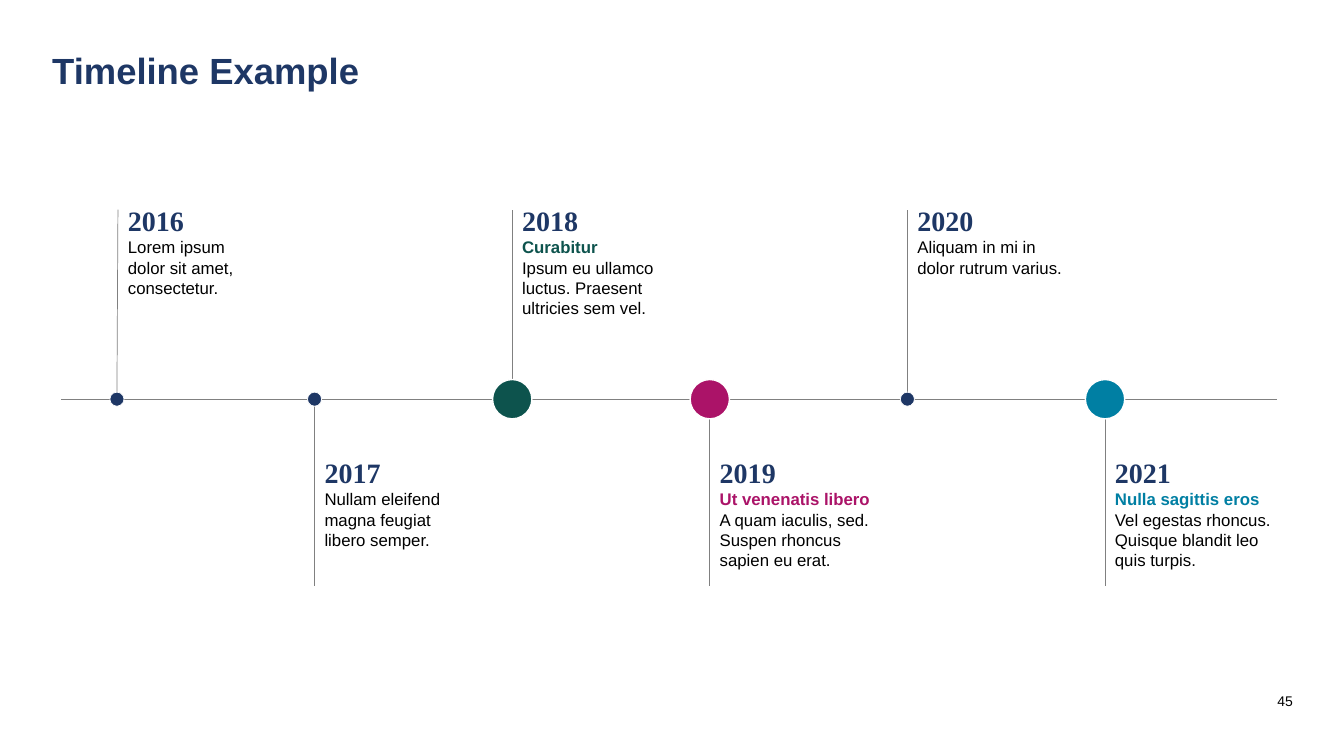
from lxml import etree
from pptx import Presentation
from pptx.dml.color import RGBColor
from pptx.enum.shapes import MSO_CONNECTOR, MSO_SHAPE
from pptx.enum.text import MSO_ANCHOR, MSO_AUTO_SIZE, PP_ALIGN
from pptx.oxml.ns import qn
from pptx.util import Inches, Pt

STRAIGHT = MSO_CONNECTOR.STRAIGHT
ELLIPSE = MSO_SHAPE.OVAL
TOP, MIDDLE = MSO_ANCHOR.TOP, MSO_ANCHOR.MIDDLE
GROW = MSO_AUTO_SIZE.SHAPE_TO_FIT_TEXT
RIGHT = PP_ALIGN.RIGHT

NAVY, BLACK, WHITE, GRAY = "1E3765", "000000", "FFFFFF", "808080"
GREEN, MAGENTA, TEAL = "0D534D", "AB1368", "007FA3"
SANS, SERIF = "Arial", "Times New Roman"

AXIS_Y = 3.96
FIRST_X, STEP = 1.16, 1.96
UPPER_END, LOWER_END = 2.08, 5.81
UPPER_TEXT, LOWER_TEXT = 1.97, 4.47

# Year, heading, body lines, accent, box width, box height, stem tilt
EVENTS = [
    ("2016", "", ["Lorem ipsum ", "dolor sit amet, consectetur."], NAVY, 1.28, 1.35, 0.01),
    ("2017", "", ["Nullam eleifend magna feugiat ", "libero semper."], NAVY, 1.48, 1.04, 0),
    ("2018", "Curabitur", ["Ipsum eu ullamco luctus. Praesent ultricies sem vel."],
     GREEN, 1.57, 1.25, 0),
    ("2019", "Ut venenatis libero ", ["A quam iaculis, sed. Suspen rhoncus sapien eu erat."],
     MAGENTA, 1.77, 1.25, 0),
    ("2020", "", ["Aliquam in mi in dolor rutrum varius."], NAVY, 1.65, 0.84, 0),
    ("2021", "Nulla sagittis eros ", ["Vel egestas rhoncus. Quisque blandit leo quis turpis."],
     TEAL, 1.77, 1.25, 0),
]


def color(value):
    """Turn a hex string into a colour."""
    return RGBColor.from_string(value)


def add_box(page, left, top, width, height, anchor=TOP):
    """Add a wrapping text box and return its text frame."""
    box = page.shapes.add_textbox(Inches(left), Inches(top), Inches(width), Inches(height))
    box.text_frame.word_wrap = True
    box.text_frame.vertical_anchor = anchor
    return box.text_frame


def add_span(para, text, size, hue, bold=False, font=SANS):
    """Add one formatted run to a paragraph."""
    span = para.add_run()
    span.text = text
    span.font.name = font
    span.font.size = Pt(size)
    span.font.bold = bold
    span.font.color.rgb = color(hue)


def add_line(page, x1, y1, x2, y2):
    """Draw a thin gray line."""
    line = page.shapes.add_connector(STRAIGHT, Inches(x1), Inches(y1), Inches(x2), Inches(y2))
    line.line.color.rgb = color(GRAY)
    line.line.width = Pt(0.5)
    etree.SubElement(line._element.spPr, qn("a:effectLst"))


def add_dot(page, x, size, hue, outline):
    """Draw a white-edged circle centred on the axis."""
    dot = page.shapes.add_shape(ELLIPSE, Inches(x - size / 2), Inches(AXIS_Y - size / 2),
                                Inches(size), Inches(size))
    dot.shadow.inherit = False
    dot.fill.solid()
    dot.fill.fore_color.rgb = color(hue)
    dot.line.color.rgb = color(WHITE)
    dot.line.width = Pt(outline)


def add_event(page, index, event):
    """Add the stem, dot and text of one year, alternating above and below."""
    year, heading, lines, accent, width, height, tilt = event
    x = FIRST_X + index * STEP
    above = index % 2 == 0
    size, outline = (0.39, 1) if heading else (0.14, 0.5)
    start = AXIS_Y - size / 2 if above else AXIS_Y + size / 2
    add_line(page, x, start, x + tilt, UPPER_END if above else LOWER_END)
    add_dot(page, x, size, accent, outline)

    frame = add_box(page, x + tilt, UPPER_TEXT if above else LOWER_TEXT, width, height)
    frame.auto_size = GROW
    add_span(frame.paragraphs[0], year, 20, NAVY, True, SERIF)
    para = frame.add_paragraph()
    if heading:
        add_span(para, heading, 12, accent, True)
        para.add_line_break()
    for number, text in enumerate(lines):
        if number:
            para.add_line_break()
        add_span(para, text, 12, BLACK)


def main():
    """Build the timeline slide."""
    deck = Presentation()
    deck.slide_width, deck.slide_height = Inches(13.33), Inches(7.5)
    page = deck.slides.add_slide(deck.slide_layouts[6])

    title = add_box(page, 0.42, 0.48, 9.37, 1.08).paragraphs[0]
    title.line_spacing = 0.9
    add_span(title, "Timeline Example", 26, NAVY, True)

    number = add_box(page, 12.14, 6.81, 0.78, 0.29, MIDDLE).paragraphs[0]
    number.alignment = RIGHT
    add_span(number, "45", 10, BLACK)

    add_line(page, 0.61, AXIS_Y, 12.67, AXIS_Y)
    for index, event in enumerate(EVENTS):
        add_event(page, index, event)
    deck.save("out.pptx")


if __name__ == "__main__":
    main()
